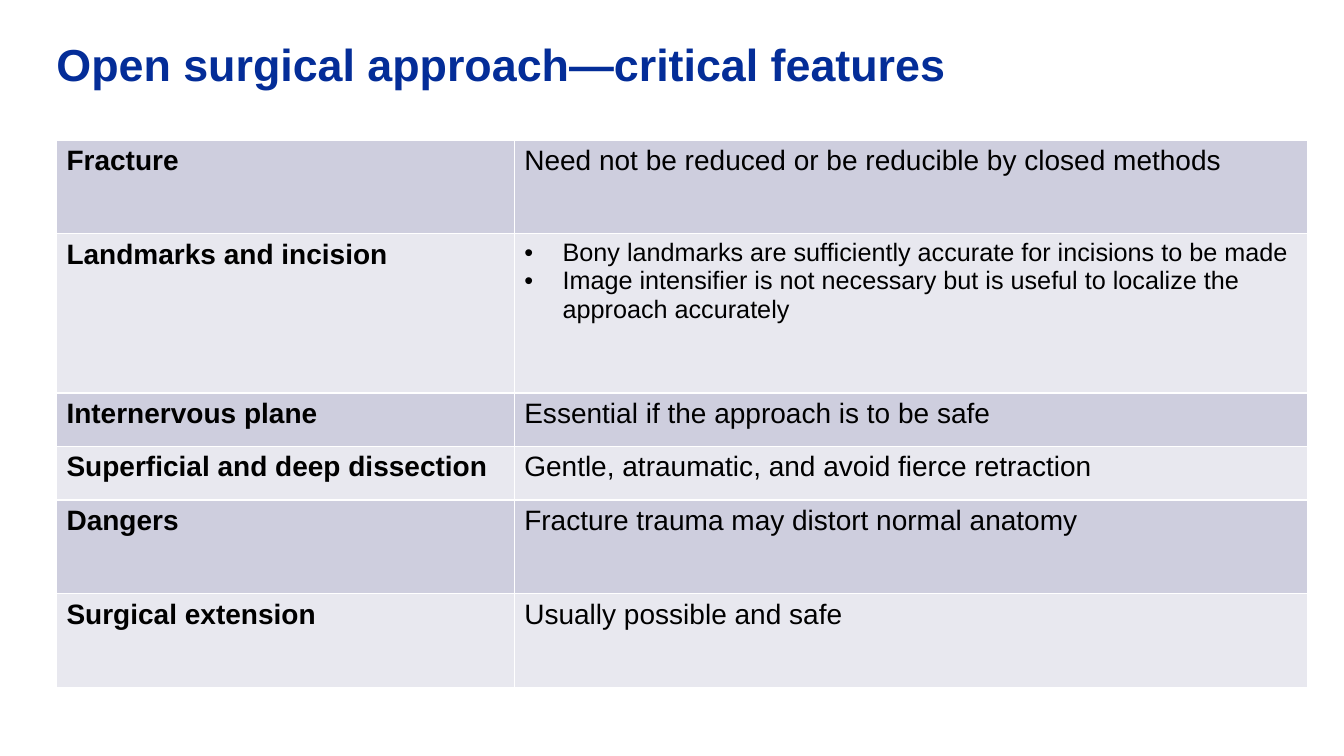
import dataclasses

import lxml.etree
import pptx
import pptx.dml.color
import pptx.enum.text
import pptx.oxml.ns
import pptx.util

NAVY = pptx.dml.color.RGBColor(0x04, 0x2D, 0x98)
BLACK = pptx.dml.color.RGBColor(0, 0, 0)
WHITE = pptx.dml.color.RGBColor(0xFF, 0xFF, 0xFF)
LILAC = pptx.dml.color.RGBColor(0xCE, 0xCE, 0xDE)
PALE = pptx.dml.color.RGBColor(0xE8, 0xE8, 0xEF)

WIDE = pptx.util.Inches(13.33)
HIGH = pptx.util.Inches(7.5)
LEFT = 4.2
COLS = (34.06, 59.04)


@dataclasses.dataclass
class Feature:
    label: str
    notes: tuple[str, ...]
    high: float
    size: int = 20
    bullet: bool = False


FEATURES = (
    Feature("Fracture", ("Need not be reduced or be reducible by closed methods",), 12.4),
    Feature(
        "Landmarks and incision",
        (
            "Bony landmarks are sufficiently accurate for incisions to be made",
            "Image intensifier is not necessary but is useful to localize the approach accurately",
        ),
        21.07, size=18, bullet=True,
    ),
    Feature("Internervous plane", ("Essential if the approach is to be safe",), 7.07),
    Feature("Superficial and deep dissection",
            ("Gentle, atraumatic, and avoid fierce retraction",), 7.07),
    Feature("Dangers", ("Fracture trauma may distort normal anatomy",), 12.4),
    Feature("Surgical extension", ("Usually possible and safe",), 12.4),
)


def across(share: float) -> int:
    return round(WIDE * share / 100)


def down(share: float) -> int:
    return round(HIGH * share / 100)


def add_node(parent, tag: str, **attrs: str):
    return lxml.etree.SubElement(parent, pptx.oxml.ns.qn(tag), attrs)


def write(frame, *lines: str, size: int = 20, bold: bool = False,
          color=BLACK, bullet: bool = False, space: float = 1.0) -> None:
    for index, line in enumerate(lines):
        para = frame.add_paragraph() if index else frame.paragraphs[0]
        para.alignment = pptx.enum.text.PP_ALIGN.LEFT
        para.line_spacing = space
        if bullet:
            props = para._p.get_or_add_pPr()
            indent = pptx.util.Inches(0.38)
            props.set("marL", str(indent))
            props.set("indent", str(-indent))
            add_node(props, "a:buFont", typeface="Arial")
            add_node(props, "a:buChar", char="•")
        run = para.add_run()
        run.text = line
        run.font.name = "Arial"
        run.font.size = pptx.util.Pt(size)
        run.font.bold = bold
        run.font.color.rgb = color


def paint(cell, color) -> None:
    props = cell._tc.get_or_add_tcPr()
    for side in ("L", "R", "T", "B"):
        edge = add_node(props, f"a:ln{side}", w=str(pptx.util.Pt(1)))
        fill = add_node(edge, "a:solidFill")
        add_node(fill, "a:srgbClr", val=str(WHITE))
    cell.fill.solid()
    cell.fill.fore_color.rgb = color


def add_title(slide) -> None:
    box = slide.shapes.add_textbox(across(LEFT), down(5.6), across(90.55), down(13.33))
    frame = box.text_frame
    frame.word_wrap = True
    frame.margin_left = frame.margin_right = 0
    frame.margin_top = frame.margin_bottom = 0
    write(frame, "Open surgical approach—critical features",
          size=32, bold=True, color=NAVY, space=0.9)


def add_features(slide) -> None:
    high = sum(item.high for item in FEATURES)
    table = slide.shapes.add_table(
        len(FEATURES), len(COLS), across(LEFT), down(18.53),
        across(sum(COLS)), down(high)).table
    table.first_row = False
    for column, share in zip(table.columns, COLS):
        column.width = across(share)
    for index, (row, item) in enumerate(zip(table.rows, FEATURES)):
        row.height = down(item.high)
        label, notes = row.cells
        for cell in (label, notes):
            paint(cell, PALE if index % 2 else LILAC)
        write(label.text_frame, item.label, bold=True)
        write(notes.text_frame, *item.notes, size=item.size, bullet=item.bullet)


def main() -> None:
    deck = pptx.Presentation()
    deck.slide_width, deck.slide_height = WIDE, HIGH
    slide = deck.slides.add_slide(deck.slide_layouts[6])
    add_title(slide)
    add_features(slide)
    deck.save("out.pptx")


if __name__ == "__main__":
    main()
